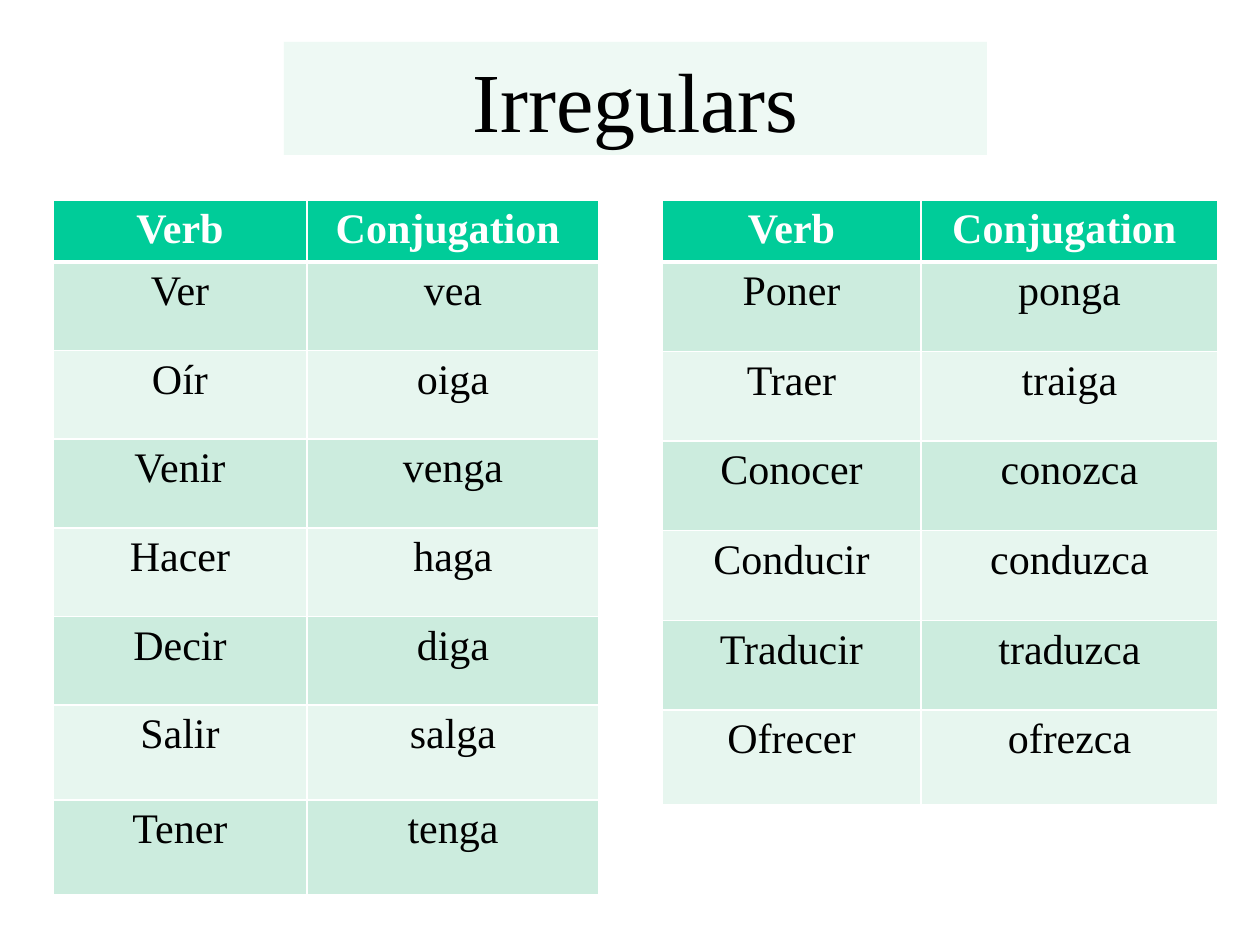
from lxml import etree
from pptx import Presentation
from pptx import util as u
from pptx.dml.color import RGBColor
from pptx.enum import shapes, text

PX = 914400 / 126
FONT = "Times New Roman"
BLACK = RGBColor(0, 0, 0)
WHITE = RGBColor(255, 255, 255)
MINT = RGBColor(0xEE, 0xF9, 0xF4)
GREEN = RGBColor(0x00, 0xCC, 0x99)
BANDS = [RGBColor(0xE7, 0xF6, 0xEF), RGBColor(0xCC, 0xEC, 0xDE)]
NS = "http://schemas.openxmlformats.org/drawingml/2006/main"


def write(frame, words, size, color, bold=False):
    line = frame.paragraphs[0]
    line.text = words
    line.alignment = text.PP_ALIGN.CENTER
    font = line.font
    font.name, font.size, font.bold = FONT, u.Pt(size), bold
    font.color.rgb = color
    return line


def edge(cell, head, below):
    props = cell._tc.get_or_add_tcPr()
    for spot, side in enumerate("LRTB"):
        thick = 3 if (head and side == "B") or (below and side == "T") else 1
        line = etree.Element(f"{{{NS}}}ln{side}", w=str(u.Pt(thick)))
        fill = etree.SubElement(line, f"{{{NS}}}solidFill")
        etree.SubElement(fill, f"{{{NS}}}srgbClr", val=str(WHITE))
        props.insert(spot, line)


deck = Presentation()
deck.slide_width, deck.slide_height = u.Inches(10), u.Inches(7.5)
slide = deck.slides.add_slide(deck.slide_layouts[6])

title = slide.shapes.add_shape(
    shapes.MSO_SHAPE.RECTANGLE, *[int(n * PX) for n in (284, 42, 703, 113)])
title.shadow.inherit = False
title.fill.solid()
title.fill.fore_color.rgb = MINT
title.line.fill.background()
title.text_frame.word_wrap = True
title.text_frame.vertical_anchor = text.MSO_ANCHOR.TOP
write(title.text_frame, "Irregulars", 48, BLACK).space_before = u.Pt(6)

HEAD = ("Verb", "Conjugation ")
LEFT = [("Ver", "vea"), ("Oír", "oiga"), ("Venir", "venga"), ("Hacer", "haga"),
        ("Decir", "diga"), ("Salir", "salga"), ("Tener", "tenga")]
RIGHT = [("Poner", "ponga"), ("Traer", "traiga"), ("Conocer", "conozca"),
         ("Conducir", "conduzca"), ("Traducir", "traduzca"), ("Ofrecer", "ofrezca")]

for left, wides, span, verbs in [(53, (254, 292), 443, LEFT),
                                 (662, (259, 297), 448, RIGHT)]:
    rows = [HEAD] + verbs
    highs = [62] + [span / 5] * 5 + [95] * (len(verbs) - 5)
    box = slide.shapes.add_table(
        len(rows), 2, *[int(n * PX) for n in (left, 200, sum(wides), sum(highs))])
    grid = box.table
    for col, wide in zip(grid.columns, wides):
        col.width = int(wide * PX)
    for r, (row, high) in enumerate(zip(rows, highs)):
        grid.rows[r].height = int(high * PX)
        for c, word in enumerate(row):
            cell = grid.cell(r, c)
            cell.fill.solid()
            cell.fill.fore_color.rgb = BANDS[r % 2] if r else GREEN
            write(cell.text_frame, word, 24, BLACK if r else WHITE, r == 0)
            edge(cell, r == 0, r == 1)

deck.save("out.pptx")
